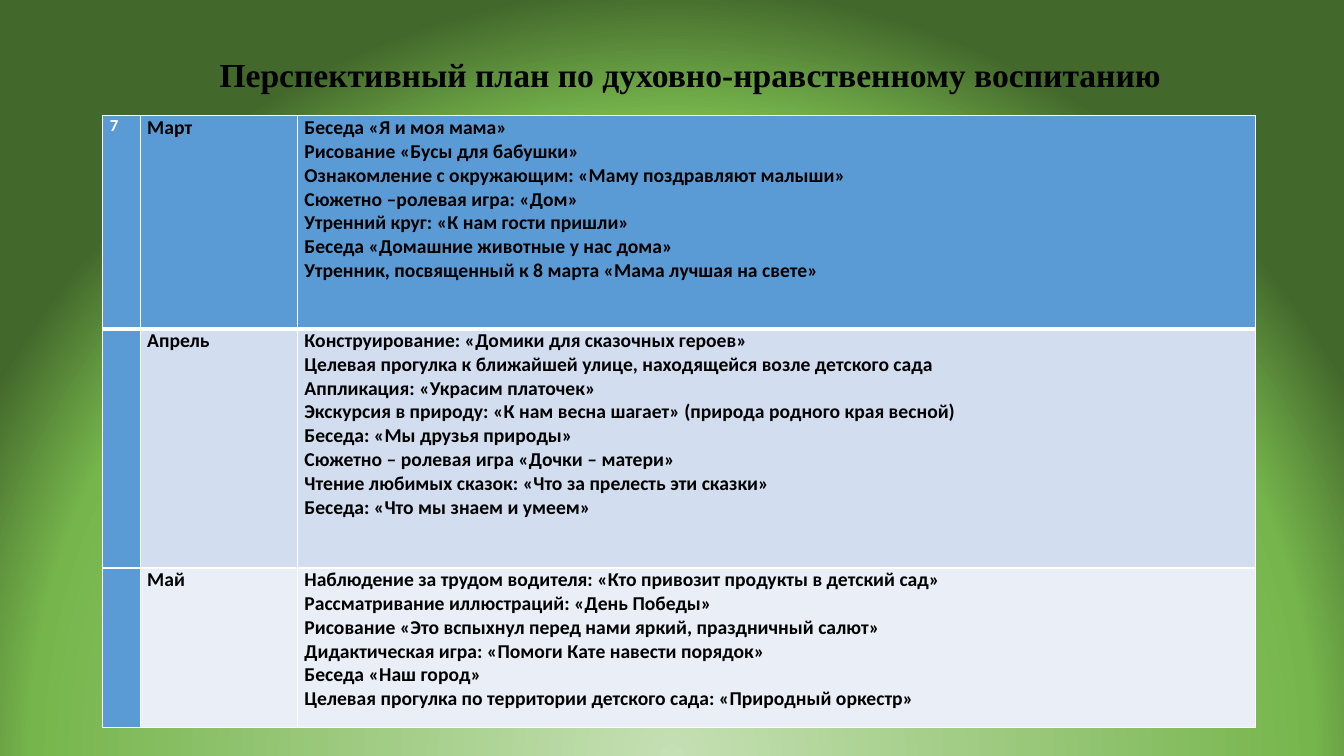
from pptx import Presentation
from pptx.dml.color import RGBColor
from pptx.enum.text import MSO_ANCHOR as Anchor, PP_ALIGN as Align
from pptx.oxml import parse_xml
from pptx.oxml.ns import nsdecls
from pptx.util import Inches, Pt

WIDTH, HEIGHT = 13.33, 7.5
BLACK, WHITE, BLUE = "000000", "FFFFFF", "5B9BD5"
MONTHS = [
    ("7", "Март", [
        "Беседа «Я и моя мама»",
        "Рисование «Бусы для бабушки»",
        "Ознакомление с окружающим: «Маму поздравляют малыши»",
        "Сюжетно –ролевая игра: «Дом»",
        "Утренний круг: «К нам гости пришли»",
        "Беседа «Домашние животные у нас дома»",
        "Утренник, посвященный к 8 марта «Мама лучшая на свете»",
    ]),
    ("", "Апрель", [
        "Конструирование: «Домики для сказочных героев»",
        "Целевая прогулка к ближайшей улице, находящейся возле детского сада",
        "Аппликация: «Украсим платочек»",
        "Экскурсия в природу: «К нам весна шагает» (природа родного края весной)",
        "Беседа: «Мы друзья природы»",
        "Сюжетно – ролевая игра «Дочки – матери»",
        "Чтение любимых сказок: «Что за прелесть эти сказки»",
        "Беседа: «Что мы знаем и умеем»",
    ]),
    ("", "Май", [
        "Наблюдение за трудом водителя: «Кто привозит продукты в детский сад»",
        "Рассматривание иллюстраций: «День Победы»",
        "Рисование «Это вспыхнул перед нами яркий, праздничный салют»",
        "Дидактическая игра: «Помоги Кате навести порядок»",
        "Беседа «Наш город»",
        "Целевая прогулка по территории детского сада: «Природный оркестр»",
    ]),
]
ROW_FILLS = [BLUE, "D2DEEF", "EAEFF7"]
COLUMN_SHARES = [0.0278, 0.117, 0.7127]
ROW_SHARES = [0.2815, 0.3165, 0.2112]


def rgb(value):
    return RGBColor.from_string(value)


def write(tf, lines, size=14, font="Calibri", color=BLACK, bold=True, align=Align.LEFT):
    """Fill a text frame with one paragraph per line."""
    for i, line in enumerate(lines):
        p = tf.add_paragraph() if i else tf.paragraphs[0]
        p.alignment = align
        r = p.add_run()
        r.text = line
        r.font.size, r.font.name, r.font.bold = Pt(size), font, bold
        r.font.color.rgb = rgb(color)


def set_borders(cell, **widths):
    """Draw white cell borders, given as L, R, T and B widths in points."""
    tc_pr = cell._tc.get_or_add_tcPr()
    for i, (side, width) in enumerate(widths.items()):
        tc_pr.insert(i, parse_xml(
            f'<a:ln{side} {nsdecls("a")} w="{Pt(width)}"><a:solidFill>'
            f'<a:srgbClr val="{WHITE}"/></a:solidFill></a:ln{side}>'))


class PlanSlide:
    """The current slide; lengths are shares of its width and height."""

    def __init__(self, prs):
        self.prs = prs
        self.slide = prs.slides.add_slide(prs.slide_layouts[5])

    def box(self, x, y, w, h):
        sw, sh = self.prs.slide_width, self.prs.slide_height
        return int(x * sw), int(y * sh), int(w * sw), int(h * sh)

    def background(self, stops):
        """Radial gradient centred below the bottom edge."""
        colors = "".join(f'<a:gs pos="{pos * 1000}"><a:srgbClr val="{c}"/></a:gs>'
                         for pos, c in stops)
        self.slide.element.cSld.insert(0, parse_xml(
            f'<p:bg {nsdecls("p", "a")}><p:bgPr><a:gradFill rotWithShape="1">'
            f'<a:gsLst>{colors}</a:gsLst><a:path path="circle">'
            '<a:fillToRect l="50000" t="130000" r="50000" b="-30000"/></a:path>'
            '</a:gradFill><a:effectLst/></p:bgPr></p:bg>'))

    def title(self, text, *place):
        sp = self.slide.shapes.title
        sp.left, sp.top, sp.width, sp.height = self.box(*place)
        tf = sp.text_frame
        tf.word_wrap = True
        tf.vertical_anchor = Anchor.TOP
        tf.margin_top = Inches(0.08)
        write(tf, [text], size=24, font="Times New Roman", align=Align.CENTER)

    def cell(self, cell, lines, fill, **style):
        cell.fill.solid()
        cell.fill.fore_color.rgb = rgb(fill)
        cell.margin_left = cell.margin_right = Inches(0.07)
        cell.margin_top = cell.margin_bottom = 0
        if any(lines):
            write(cell.text_frame, lines, **style)

    def plan(self, x, y):
        place = self.box(x, y, sum(COLUMN_SHARES), sum(ROW_SHARES))
        table = self.slide.shapes.add_table(
            len(MONTHS), len(COLUMN_SHARES), *place).table
        table.horz_banding = False
        for column, share in zip(table.columns, COLUMN_SHARES):
            column.width = int(share * self.prs.slide_width)
        for row, share in zip(table.rows, ROW_SHARES):
            row.height = int(share * self.prs.slide_height)
        for i, (number, month, activities) in enumerate(MONTHS):
            number_cell, month_cell, activity_cell = table.rows[i].cells
            self.cell(number_cell, [number], BLUE, size=12, color=WHITE)
            self.cell(month_cell, [month], ROW_FILLS[i])
            self.cell(activity_cell, activities, ROW_FILLS[i])
            for cell in table.rows[i].cells:
                set_borders(cell, L=1, R=1, T=3 if i == 1 else 1, B=3 if i == 0 else 1)


def main():
    prs = Presentation()
    prs.slide_width, prs.slide_height = Inches(WIDTH), Inches(HEIGHT)
    s = PlanSlide(prs)
    s.background([(0, "C5E0B4"), (83, "76B54C"), (100, "43682B")])
    s.title("Перспективный план по духовно-нравственному воспитанию",
            0.094, 0.061, 0.839, 0.121)
    s.plan(0.0765, 0.1533)
    prs.save("out.pptx")


if __name__ == "__main__":
    main()
